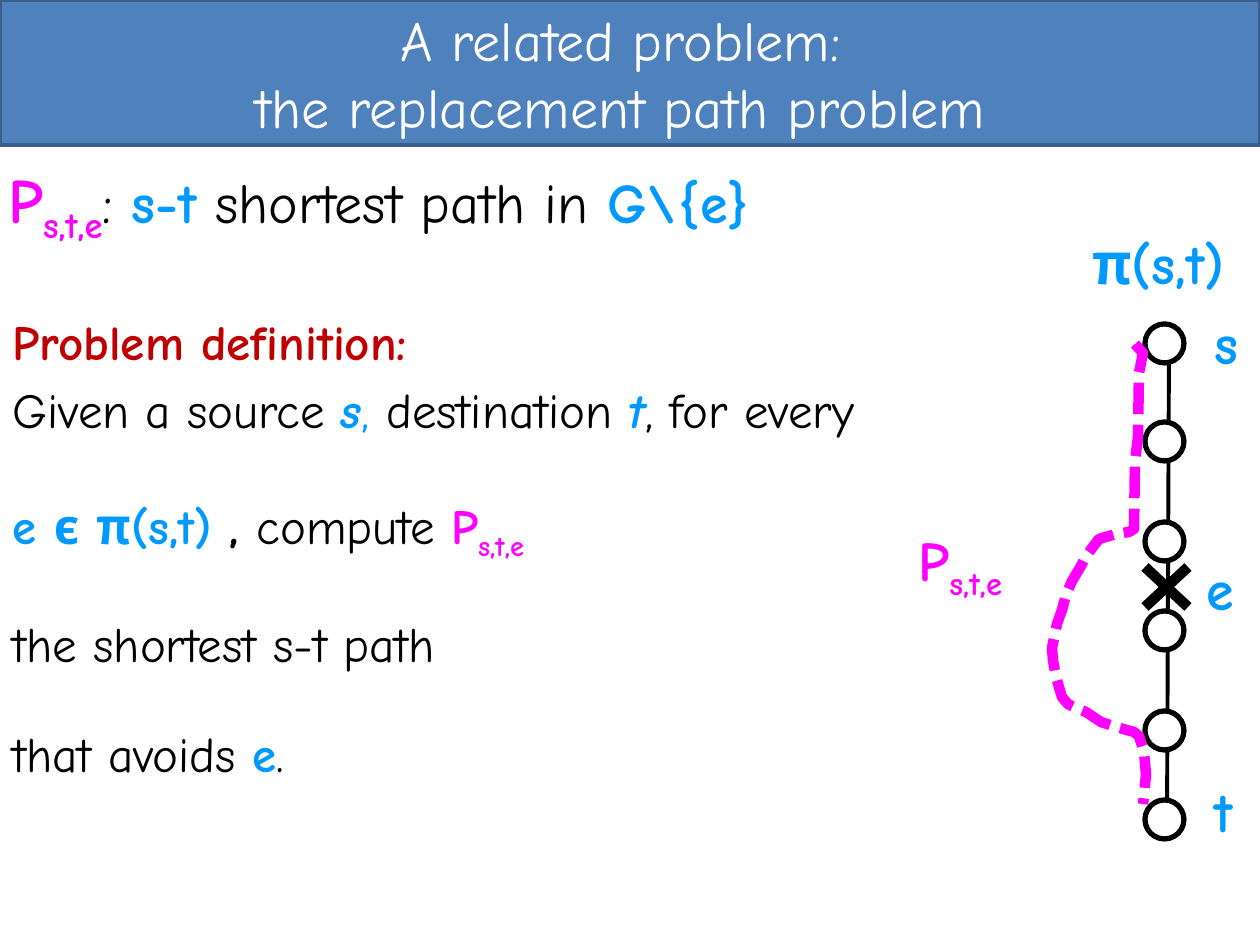
from dataclasses import dataclass

from lxml import etree
from pptx import Presentation
from pptx.dml.color import RGBColor
from pptx.enum.dml import MSO_LINE
from pptx.enum.shapes import MSO_CONNECTOR, MSO_SHAPE
from pptx.enum.text import MSO_ANCHOR, MSO_AUTO_SIZE, PP_ALIGN
from pptx.oxml.ns import qn
from pptx.util import Emu, Pt

STRAIGHT = MSO_CONNECTOR.STRAIGHT
RECT, OVAL = MSO_SHAPE.RECTANGLE, MSO_SHAPE.OVAL
MIDDLE, CENTER = MSO_ANCHOR.MIDDLE, PP_ALIGN.CENTER
FIT, FIXED = MSO_AUTO_SIZE.SHAPE_TO_FIT_TEXT, MSO_AUTO_SIZE.NONE
SYS_DASH = MSO_LINE.SQUARE_DOT


@dataclass(frozen=True)
class Theme:
    font: str = "Comic Neue"
    greek: str = "Noto Sans CJK SC"
    black: str = "000000"
    white: str = "FFFFFF"
    blue: str = "0099FF"
    pink: str = "FF00FF"
    red: str = "C00000"
    banner: str = "4F81BD"
    banner_line: str = "3A5F8C"
    body: int = 28
    label: int = 32
    lead: int = 36


T = Theme()
EMU_PER_PX = 914400 / 126

# Run styles: colour, then any of b (bold), i (italic), g (Greek font), s (subscript)
PLAIN, BOLD, RED = (T.black, ""), (T.black, "b"), (T.red, "b")
BLUE, BLUE_PLAIN, VAR, PI = (T.blue, "b"), (T.blue, ""), (T.blue, "bi"), (T.blue, "bg")
PINK, SUB = (T.pink, "b"), (T.pink, "bs")
WHITE = (T.white, "")

# Content
TITLE = ["A related problem: ", "the replacement path problem "]
PATH_NAME = [("P", PINK), ("s,t,e", SUB)]
PI_ST = [("π", PI), ("(s,t)", BLUE)]
LEAD = [(": ", PLAIN), ("s-t", BLUE), (" shortest path in ", PLAIN), ("G\\{e}", BLUE)]
BODY = [  # line spacing, runs
    (None, [("Problem definition:", RED)]),
    (None, [("Given a source ", PLAIN), ("s", VAR), (",", BLUE_PLAIN),
            (" destination ", PLAIN), ("t", VAR), (", for every", PLAIN)]),
    (1.7, [("e ϵ ", BLUE), ("π", PI), ("(s,t) ", BLUE), (", ", BOLD),
           ("compute ", PLAIN), *PATH_NAME]),
    (1.7, [("the shortest s-t path", PLAIN)]),
    (1.7, [("that avoids ", PLAIN), ("e", BLUE), (".", PLAIN)]),
]
LABELS = [  # left, top, width, height, runs
    (1080, 222, 188, 81, PI_ST),
    (1202, 302, 53, 81, [("s", BLUE)]),
    (1202, 770, 53, 81, [("t", BLUE)]),
    (1194, 548, 57, 81, [("e", BLUE)]),
    (906, 519, 145, 81, PATH_NAME),
]
NODE_LEFT, NODE_SIZE = 1145, 39
NODE_TOPS = [324, 422, 522, 611, 711, 800]
EDGE = (1169, 349, 1167, 829)
CROSS = (1145, 567, 1188, 607)
DETOUR = [
    (1135, 344), (1143, 353), (1139, 373), (1138, 437), (1135, 461), (1134, 529),
    (1129, 532), (1116, 534), (1099, 539), (1086, 556), (1081, 566), (1072, 581),
    (1066, 595), (1062, 610), (1057, 624), (1052, 648), (1053, 660), (1056, 677),
    (1062, 697), (1068, 704), (1076, 708), (1086, 712), (1101, 722), (1116, 727),
    (1134, 732), (1139, 736), (1144, 752), (1146, 774), (1144, 796), (1143, 804),
]


def px(*values):
    return [Emu(round(v * EMU_PER_PX)) for v in values]


def rgb(color):
    return RGBColor.from_string(color)


def set_line(sp, color, width):
    sp.line.color.rgb = rgb(color)
    sp.line.width = Pt(width)


def fill_paragraph(p, runs, size):
    p.font.name, p.font.size = T.font, Pt(size)
    for text, (color, flags) in runs:
        r = p.add_run()
        r.text = text
        r.font.color.rgb = rgb(color)
        r.font.bold = "b" in flags
        if "i" in flags:
            r.font.italic = True
        if "g" in flags:
            r.font.name = T.greek
        if "s" in flags:
            r.font._element.set("baseline", "-25000")


def add_text(slide, box, paragraphs, size, wrap=False):
    tf = slide.shapes.add_textbox(*px(*box)).text_frame
    tf.word_wrap = wrap
    tf.auto_size = FIXED if wrap else FIT
    for n, runs in enumerate(paragraphs):
        fill_paragraph(tf.add_paragraph() if n else tf.paragraphs[0], runs, size)
    return tf


def add_shape(slide, kind, box, fill, line, width):
    sp = slide.shapes.add_shape(kind, *px(*box))
    sp.shadow.inherit = False
    sp.fill.solid()
    sp.fill.fore_color.rgb = rgb(fill)
    set_line(sp, line, width)
    return sp


def add_line(slide, ends, width):
    s = slide.shapes.add_connector(STRAIGHT, *px(*ends))
    set_line(s, T.black, width)
    etree.SubElement(s._element.spPr, qn("a:effectLst"))


def set_space_before(p, percent):
    p.space_before = Pt(0)
    spacing = p._p.pPr.find(qn("a:spcBef"))
    spacing.remove(spacing[0])
    etree.SubElement(spacing, qn("a:spcPct"), val=str(percent * 1000))


def main():
    prs = Presentation()
    prs.slide_width, prs.slide_height = px(1260, 945)
    slide = prs.slides.add_slide(prs.slide_layouts[6])

    # Problem definition
    tf = add_text(slide, (0, 305, 1131, 674), [runs for _, runs in BODY], T.body, wrap=True)
    for p, (spacing, _) in zip(tf.paragraphs, BODY):
        if spacing:
            p.line_spacing = spacing
        set_space_before(p, 20)

    # Title banner
    tf = add_shape(slide, RECT, (0, 0, 1260, 145), T.banner, T.banner_line, 2).text_frame
    tf.vertical_anchor = MIDDLE
    tf.word_wrap = True
    for n, text in enumerate(TITLE):
        p = tf.add_paragraph() if n else tf.paragraphs[0]
        p.alignment = CENTER
        fill_paragraph(p, [(text, WHITE)], T.label)

    # Shortest path with its nodes
    add_line(slide, EDGE, 2.25)
    for top in NODE_TOPS:
        add_shape(slide, OVAL, (NODE_LEFT, top, NODE_SIZE, NODE_SIZE), T.white, T.black, 3)

    # Cross over the failing edge
    left, top, right, bottom = CROSS
    add_line(slide, (left, top, right, bottom), 6)
    add_line(slide, (left, bottom, right, top), 6)

    # Labels and lead sentence
    for *box, runs in LABELS:
        add_text(slide, box, [runs], T.label)
    tf = add_text(slide, (-4, 154, 936, 89), [PATH_NAME + LEAD], T.lead)
    for r in tf.paragraphs[0].runs[len(PATH_NAME):]:
        r.font.size = Pt(T.label)

    # Dashed replacement path
    builder = slide.shapes.build_freeform(*DETOUR[0], scale=EMU_PER_PX)
    builder.add_line_segments(DETOUR[1:], close=False)
    sp = builder.convert_to_shape()
    sp.shadow.inherit = False
    sp.fill.background()
    set_line(sp, T.pink, 6)
    sp.line.dash_style = SYS_DASH

    prs.save("out.pptx")


if __name__ == "__main__":
    main()
